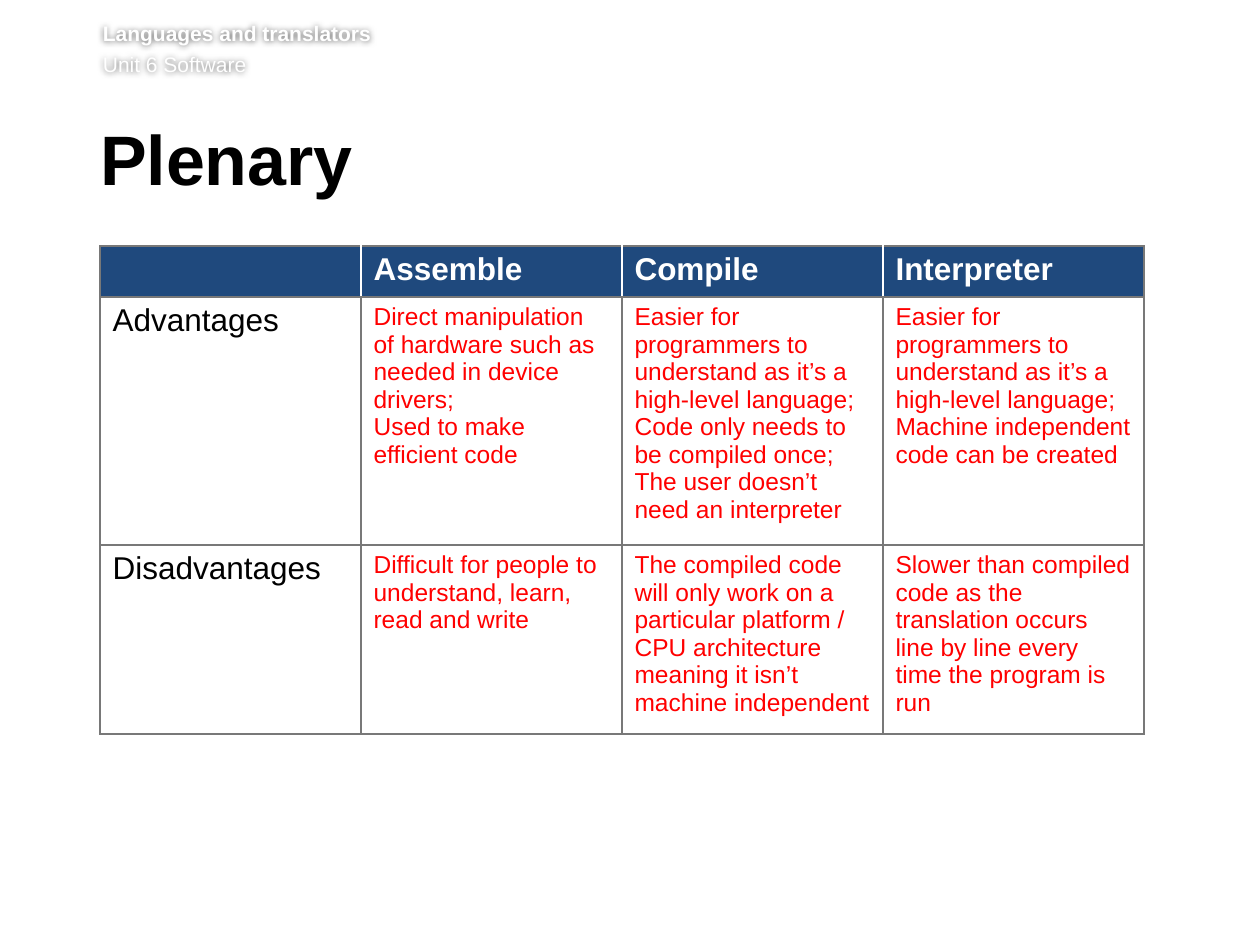
from lxml.etree import SubElement
from pptx import Presentation
from pptx.dml.color import RGBColor
from pptx.oxml.ns import qn
from pptx.util import Emu, Pt

EMU_PER_PX = 914400 / 126
FONT = "Arial"
WHITE = RGBColor(0xFF, 0xFF, 0xFF)
BLACK = RGBColor(0x00, 0x00, 0x00)
RED = RGBColor(0xFF, 0x00, 0x00)
NAVY = RGBColor(0x1F, 0x49, 0x7D)
GREY = RGBColor(0x78, 0x78, 0x78)

COLUMN_HEADS = ["", "Assemble", "Compile", "Interpreter"]
COMPARISON = {
    "Advantages": [
        ["Direct manipulation of hardware such as needed in device drivers;",
         "Used to make efficient code"],
        ["Easier for programmers to understand as it’s a high-level language;",
         "Code only needs to be compiled once;",
         "The user doesn’t need an interpreter"],
        ["Easier for programmers to understand as it’s a high-level language;",
         "Machine independent code can be created"],
    ],
    "Disadvantages": [
        ["Difficult for people to understand, learn, read and write"],
        ["The compiled code will only work on a particular platform / "
         "CPU architecture meaning it isn’t machine independent"],
        ["Slower than compiled code as the translation occurs line by line "
         "every time the program is run"],
    ],
}
ROW_HEIGHTS = [51, 233, 178]


def px(length):
    return Emu(round(length * EMU_PER_PX))


def write(text_frame, lines, size, color, bold=False):
    text_frame.text = "\n".join(lines)
    for paragraph in text_frame.paragraphs:
        paragraph.font.size = Pt(size)
        for run in paragraph.runs:
            run.font.name = FONT
            run.font.size = Pt(size)
            run.font.bold = bold
            run.font.color.rgb = color


def add_text(slide, box, margins, lines, size, color):
    """Add a wrapping bold text box; margins are left, top, right, bottom."""
    shape = slide.shapes.add_textbox(*map(px, box))
    frame = shape.text_frame
    frame.word_wrap = True
    (frame.margin_left, frame.margin_top,
     frame.margin_right, frame.margin_bottom) = map(px, margins)
    write(frame, lines, size, color, bold=True)
    return shape


def add_glow_shadow(shape):
    """Blurred shadow that keeps the white lettering readable."""
    effects = SubElement(shape._element.spPr, qn("a:effectLst"))
    shadow = SubElement(effects, qn("a:outerShdw"), blurRad=str(Pt(4)),
                        dist="0", dir="0", algn="ctr", rotWithShape="0")
    color = SubElement(shadow, qn("a:srgbClr"), val=str(BLACK))
    SubElement(color, qn("a:alpha"), val="60000")


def add_header(slide, box):
    shape = add_text(slide, box, (0, 0, 0, 6),
                     ["Languages and translators", "Unit 6 Software"], 12, WHITE)
    unit = shape.text_frame.paragraphs[1]
    unit.space_before = Pt(2.9)
    unit.runs[0].font.bold = False
    add_glow_shadow(shape)


def add_title(slide, box):
    shape = add_text(slide, box, (0, 6, 13, 6), ["Plenary"], 40, BLACK)
    paragraph = shape.text_frame.paragraphs[0]
    paragraph.line_spacing = Pt(39)
    paragraph.space_after = Pt(15)


def set_borders(cell, left=GREY, right=GREY):
    """Draw 1 pt borders; call before filling, as lines precede the fill."""
    properties = cell._tc.get_or_add_tcPr()
    sides = {"a:lnL": left, "a:lnR": right, "a:lnT": GREY, "a:lnB": GREY}
    for tag, color in sides.items():
        line = SubElement(properties, qn(tag), w=str(Pt(1)))
        fill = SubElement(line, qn("a:solidFill"))
        SubElement(fill, qn("a:srgbClr"), val=str(color))


def add_comparison(slide, left, top, width):
    rows, columns = len(ROW_HEIGHTS), len(COLUMN_HEADS)
    frame = slide.shapes.add_table(rows, columns, px(left), px(top),
                                   px(width), px(sum(ROW_HEIGHTS)))
    table = frame.table
    table.first_row = table.horz_banding = False
    for row, height in zip(table.rows, ROW_HEIGHTS):
        row.height = px(height)
    for column in table.columns:
        column.width = px(width / columns)

    for index, head in enumerate(COLUMN_HEADS):
        cell = table.cell(0, index)
        set_borders(cell, left=WHITE if index else GREY,
                    right=WHITE if index < columns - 1 else GREY)
        cell.fill.solid()
        cell.fill.fore_color.rgb = NAVY
        write(cell.text_frame, [head], 18, WHITE, bold=True)

    for row, (label, answers) in enumerate(COMPARISON.items(), start=1):
        for column, lines in enumerate([[label], *answers]):
            cell = table.cell(row, column)
            set_borders(cell)
            cell.fill.background()
            size, color = (14, RED) if column else (18, BLACK)
            write(cell.text_frame, lines, size, color)


def main():
    presentation = Presentation()
    presentation.slide_width, presentation.slide_height = px(1260), px(945)
    slide = presentation.slides.add_slide(presentation.slide_layouts[6])
    add_header(slide, (103, 21, 1111, 62))
    add_title(slide, (100, 125, 1077, 92))
    add_comparison(slide, 100, 246, 1044)
    presentation.save("out.pptx")


if __name__ == "__main__":
    main()
